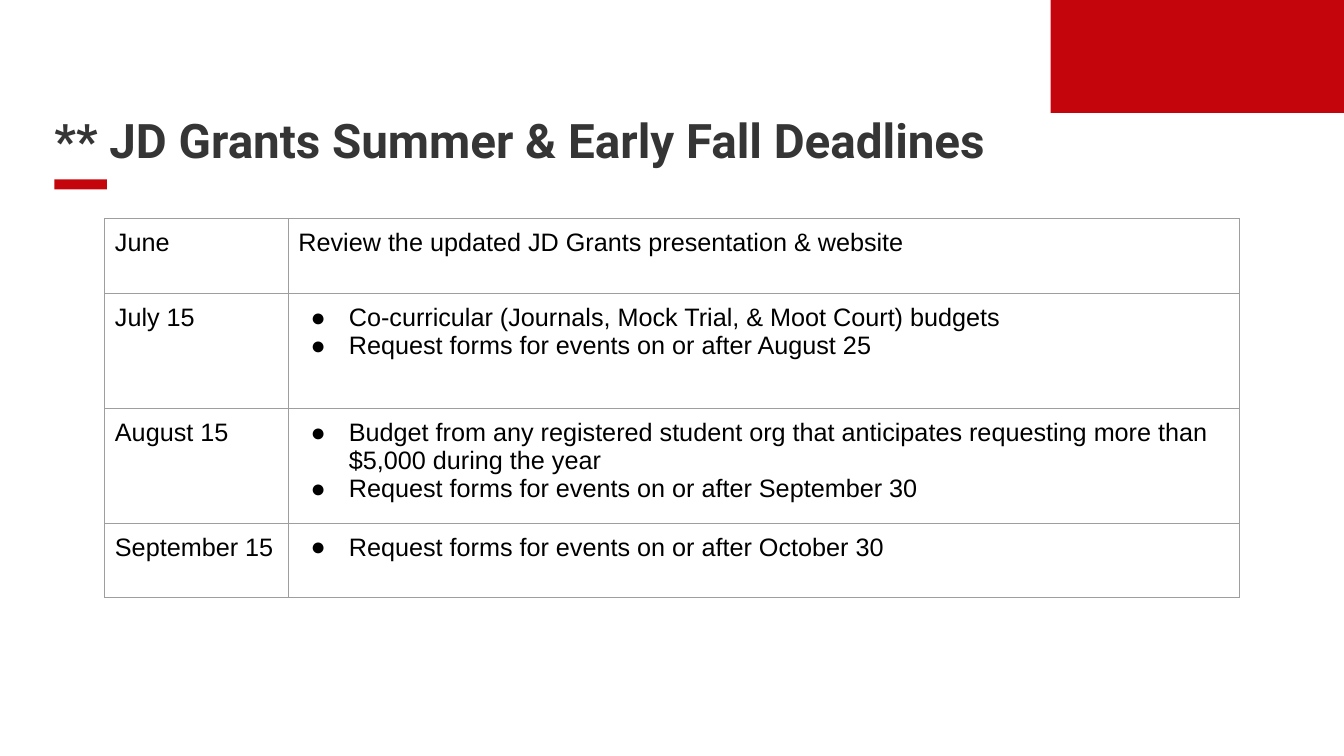
"""Build the JD Grants deadlines slide."""
from dataclasses import dataclass

from lxml.etree import SubElement as Sub
from pptx import Presentation
from pptx.dml.color import RGBColor as Rgb
from pptx.enum.shapes import MSO_SHAPE as Kind
from pptx.enum.text import MSO_ANCHOR as Anchor, MSO_AUTO_SIZE as Fit, PP_ALIGN as Align
from pptx.oxml.ns import qn
from pptx.util import Inches, Pt


@dataclass(frozen=True)
class Theme:
    """Colours, fonts and type sizes."""
    red: str = "C5050C"
    dark: str = "353535"
    ink: str = "000000"
    rule: str = "9E9E9E"
    paper: str = "FFFFFF"
    head: str = "Roboto"
    body: str = "Arial"
    big: int = 34
    text: int = 18


THEME = Theme()
TITLE = "** JD Grants Summer & Early Fall Deadlines"
COLS = (1.82, 9.43)
ROWS = (
    (0.74, "June", False, ("Review the updated JD Grants presentation & website",)),
    (1.14, "July 15", True, (
        "Co-curricular (Journals, Mock Trial, & Moot Court) budgets",
        "Request forms for events on or after August 25")),
    (1.14, "August 15", True, (
        "Budget from any registered student org that anticipates requesting "
        "more than $5,000 during the year",
        "Request forms for events on or after September 30")),
    (0.74, "September 15", True, ("Request forms for events on or after October 30",)),
)


def add_run(para, text, face, size, color, bold=False):
    """Add one styled run."""
    run = para.add_run()
    run.text = text
    font = run.font
    font.name, font.size, font.bold = face, Pt(size), bold
    font.color.rgb = Rgb.from_string(color)


def add_block(slide, *box):
    """Add a plain red rectangle."""
    block = slide.shapes.add_shape(Kind.RECTANGLE, *map(Inches, box))
    block.shadow.inherit = False
    block.fill.solid()
    block.fill.fore_color.rgb = Rgb.from_string(THEME.red)
    block.line.fill.background()


def set_title(slide):
    """Place and fill the title."""
    title = slide.shapes.title
    title.left, title.top = Inches(0.54), Inches(0.5)
    title.width, title.height = Inches(9.87), Inches(1.17)
    frame = title.text_frame
    frame.word_wrap, frame.auto_size = True, Fit.NONE
    frame.vertical_anchor = Anchor.BOTTOM
    frame.margin_left = frame.margin_bottom = 0
    frame.margin_top, frame.margin_right = Inches(0.05), Inches(0.1)
    para = frame.paragraphs[0]
    para.alignment, para.line_spacing = Align.LEFT, 0.9
    add_run(para, TITLE, THEME.head, THEME.big, THEME.dark, True)


def add_bullet(para):
    """Give a paragraph a hanging round bullet."""
    props = para._p.get_or_add_pPr()
    props.set("marL", str(Inches(0.5)))
    props.set("indent", str(Inches(-0.38)))
    tint = Sub(props, qn("a:buClr"))
    Sub(tint, qn("a:srgbClr"), val=THEME.ink)
    Sub(props, qn("a:buFont"), typeface=THEME.body)
    Sub(props, qn("a:buChar"), char="●")


def add_rules(cell):
    """Draw thin rules on all four sides of a cell."""
    props = cell._tc.get_or_add_tcPr()
    for side in "LRTB":
        line = Sub(props, qn(f"a:ln{side}"), w=str(Pt(0.75)))
        fill = Sub(line, qn("a:solidFill"))
        Sub(fill, qn("a:srgbClr"), val=THEME.rule)


def fill_cell(cell, lines, dots=False):
    """Style a cell and write its paragraphs."""
    add_rules(cell)
    cell.fill.solid()
    cell.fill.fore_color.rgb = Rgb.from_string(THEME.paper)
    cell.margin_left = cell.margin_right = Inches(0.1)
    cell.margin_top = cell.margin_bottom = Inches(0.1)
    frame = cell.text_frame
    for num, line in enumerate(lines):
        para = frame.add_paragraph() if num else frame.paragraphs[0]
        if dots:
            add_bullet(para)
        add_run(para, line, THEME.body, THEME.text, THEME.ink)


def add_dates(slide):
    """Add the table of deadlines."""
    size = sum(COLS), sum(row[0] for row in ROWS)
    frame = slide.shapes.add_table(len(ROWS), len(COLS), *map(Inches, (1.04, 2.17, *size)))
    table = frame.table
    table.first_row = table.horz_banding = False
    for col, width in zip(table.columns, COLS):
        col.width = Inches(width)
    for row, (height, date, dots, tasks) in zip(table.rows, ROWS):
        row.height = Inches(height)
        fill_cell(row.cells[0], (date,))
        fill_cell(row.cells[1], tasks, dots)


def main():
    """Build and save the slide."""
    deck = Presentation()
    deck.slide_width, deck.slide_height = Inches(13.33), Inches(7.5)
    slide = deck.slides.add_slide(deck.slide_layouts[5])
    add_block(slide, 10.42, 0, 2.91, 1.12)
    add_block(slide, 0.54, 1.78, 0.52, 0.1)
    set_title(slide)
    add_dates(slide)
    deck.save("out.pptx")


if __name__ == "__main__":
    main()
